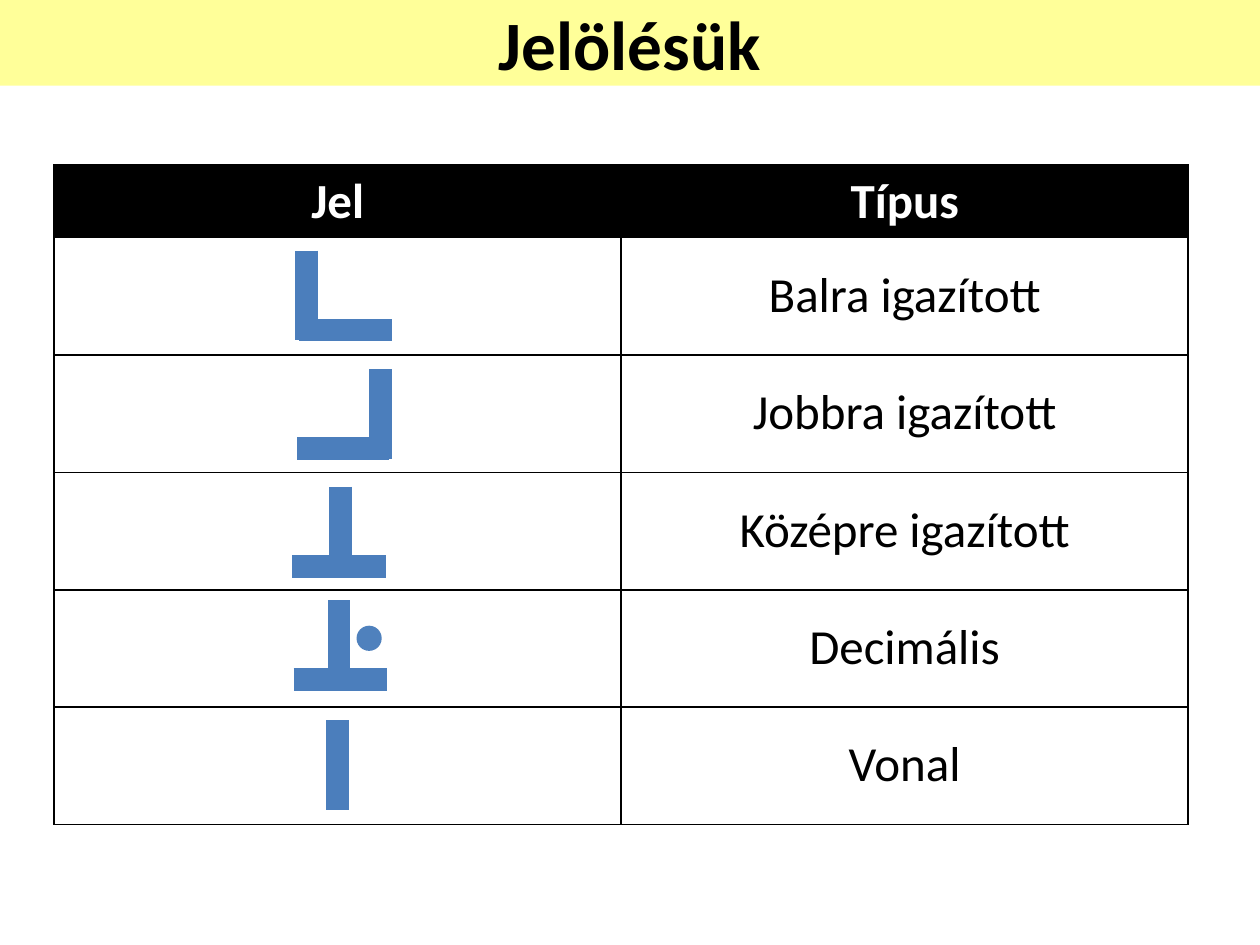
import dataclasses
import pptx
import pptx.util
import pptx.dml.color
import pptx.enum.shapes
import pptx.enum.text
import pptx.oxml
import pptx.oxml.ns

COLS, ROWS = 100, 75
LEFT, TOP, HALF = 4.3, 13.1, 45
HEAD, STEP = 5.7, 9.32
STEM, DROP = 7.1, 6.3


@dataclasses.dataclass(frozen=True)
class Theme:
    font: str = "Calibri"
    black: str = "000000"
    white: str = "FFFFFF"
    band: str = "FFFF99"
    bar: str = "4B7EBC"
    dot: str = "4F81BD"
    title: float = 39.6
    body: float = 28
    thick: float = 13
    edge: float = 1


def rgb(code):
    return pptx.dml.color.RGBColor.from_string(code)


class Deck:
    def __init__(self, theme):
        self.theme = theme
        self.file = pptx.Presentation()
        self.file.slide_width = pptx.util.Inches(10)
        self.file.slide_height = pptx.util.Inches(7.5)
        self.page = self.file.slides.add_slide(self.file.slide_layouts[6])
        self.group()

    def group(self, new=False):
        """Choose where shapes go: the slide, or a new group on it."""
        shapes = self.page.shapes
        self.into = shapes.add_group_shape().shapes if new else shapes

    def grid(self, *marks):
        """Turn column, row, column, row ... into lengths."""
        units = self.file.slide_width / COLS, self.file.slide_height / ROWS
        return [round(mark * units[i % 2]) for i, mark in enumerate(marks)]

    def text(self, frame, words, color, **format):
        para = frame.paragraphs[0]
        para.alignment = pptx.enum.text.PP_ALIGN.CENTER
        run = para.add_run()
        run.text = words
        format = {"name": self.theme.font, "bold": False, **format}
        for key, value in format.items():
            setattr(run.font, key, value)
        run.font.color.rgb = rgb(color)

    def shape(self, kind, color, *box):
        item = self.into.add_shape(kind, *self.grid(*box))
        item.shadow.inherit = False
        item.fill.solid()
        item.fill.fore_color.rgb = rgb(color)
        item.line.fill.background()
        return item

    def title(self, words):
        kind = pptx.enum.shapes.MSO_SHAPE.RECTANGLE
        band = self.shape(kind, self.theme.band, 0, 0, COLS, 6.8)
        frame = band.text_frame
        frame.word_wrap = True
        frame.vertical_anchor = pptx.enum.text.MSO_ANCHOR.MIDDLE
        self.text(frame, words, self.theme.black, bold=True,
                  size=pptx.util.Pt(self.theme.title))

    def label(self, words, *box):
        frame = self.into.add_textbox(*self.grid(*box)).text_frame
        frame.word_wrap = True
        self.text(frame, words, self.theme.black,
                  size=pptx.util.Pt(self.theme.body))

    def bar(self, *ends):
        kind = pptx.enum.shapes.MSO_CONNECTOR.STRAIGHT
        line = self.into.add_connector(kind, *self.grid(*ends))
        line.line.color.rgb = rgb(self.theme.bar)
        line.line.width = pptx.util.Pt(self.theme.thick)
        props = line._element.spPr
        props.append(props.makeelement(pptx.oxml.ns.qn("a:effectLst"), {}))

    def dot(self, *box):
        self.shape(pptx.enum.shapes.MSO_SHAPE.OVAL, self.theme.dot, *box)

    def edges(self, cell):
        props = cell._tc.get_or_add_tcPr()
        width = pptx.util.Pt(self.theme.edge)
        for side in "LRTB":
            props.append(pptx.oxml.parse_xml(
                f'<a:ln{side} {pptx.oxml.ns.nsdecls("a")} w="{width}">'
                f'<a:solidFill><a:srgbClr val="{self.theme.black}"/>'
                f'</a:solidFill></a:ln{side}>'))

    def table(self, heads, count):
        box = self.grid(LEFT, TOP, HALF * len(heads), HEAD + STEP * count)
        table = self.into.add_table(count + 1, len(heads), *box).table
        for i, row in enumerate(table.rows):
            row.height = self.grid(0, STEP if i else HEAD)[1]
            for cell in row.cells:
                self.edges(cell)
                cell.fill.background()
        for cell, words in zip(table.rows[0].cells, heads):
            cell.fill.solid()
            cell.fill.fore_color.rgb = rgb(self.theme.black)
            cell.vertical_anchor = pptx.enum.text.MSO_ANCHOR.MIDDLE
            self.text(cell.text_frame, words, self.theme.white, bold=True,
                      size=pptx.util.Pt(self.theme.body))


# Name, stem column, stem inset in its row, ends of the foot, column of the dot
TABS = [
    ("Balra igazított", 24.3, 1.1, (23.7, 31.1), None),
    ("Jobbra igazított", 30.2, 1.2, (23.6, 30.9), None),
    ("Középre igazított", 27, 1.2, (23.2, 30.6), None),
    ("Decimális", 26.9, 0.9, (23.3, 30.7), 28.3),
    ("Vonal", 26.8, 1.1, None, None),
]


def main():
    deck = Deck(Theme())
    deck.title("Jelölésük")
    deck.table(["Jel", "Típus"], len(TABS))
    for i, (name, stem, inset, foot, dot) in enumerate(TABS):
        row = TOP + HEAD + i * STEP
        top = row + inset
        deck.group(new=True)
        deck.bar(stem, top, stem, top + STEM)
        if foot:
            deck.bar(foot[0], top + DROP, foot[1], top + DROP)
        if dot:
            deck.dot(dot, top + 2, 2, 2)
        deck.label(name, LEFT + HALF, row + 1.6, HALF, 5.7)
    deck.file.save("out.pptx")


if __name__ == "__main__":
    main()
